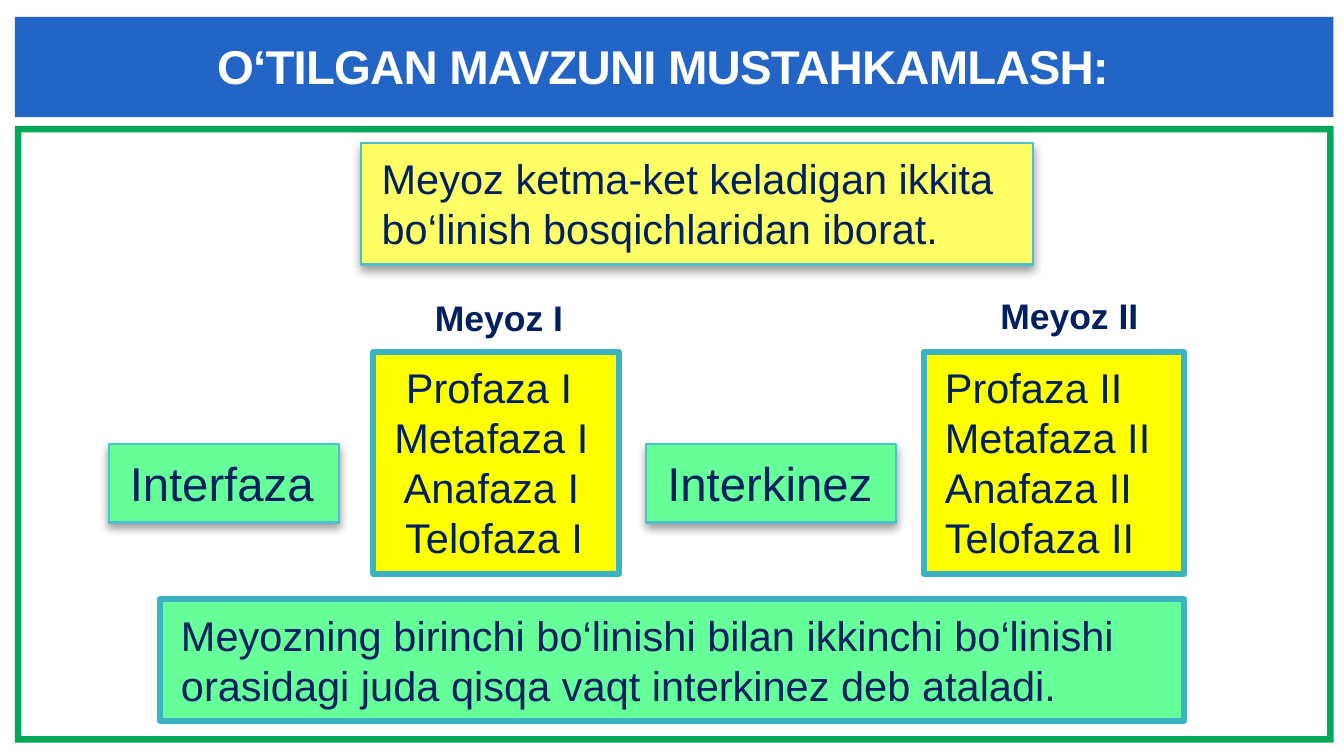
from pptx import Presentation
from pptx.dml.color import RGBColor
from pptx.enum.shapes import MSO_SHAPE
from pptx.enum.text import MSO_ANCHOR, MSO_AUTO_SIZE, PP_ALIGN
from pptx.oxml import parse_xml
from pptx.oxml.ns import nsdecls
from pptx.util import Cm, Inches, Pt

RECTANGLE = MSO_SHAPE.RECTANGLE
TOP, MIDDLE = MSO_ANCHOR.TOP, MSO_ANCHOR.MIDDLE
LEFT, CENTER = PP_ALIGN.LEFT, PP_ALIGN.CENTER
GROW = MSO_AUTO_SIZE.SHAPE_TO_FIT_TEXT

COLORS = {
    "band": "2365C7", "frame": "00A859", "title": "FEFEFE", "text": "002060",
    "mint": "66FF99", "lemon": "FFFF66", "yellow": "FFFF00",
    "thin": "4CC1C9", "thick": "3CB2C3",
}
FONT = "Arial"
TITLE = "O‘TILGAN MAVZUNI MUSTAHKAMLASH:"
BAND = (0.07, 0.08, 6.18, 0.47)
FRAME = (0.07, 0.59, 6.18, 2.89)
FRAME_THICKNESS = 0.03

# lines, place, fill, text size, wraps, raised (thin line with a shadow)
CARDS = [
    (["Interkinez"], (3.03, 2.08, 1.17, 0.37), "mint", 16, False, True),
    (["Profaza II", "Metafaza II", "Anafaza II", "Telofaza II"],
     (4.33, 1.65, 1.22, 1.04), "yellow", 14, False, False),
    (["Meyozning birinchi bo‘linishi bilan ikkinchi bo‘linishi "
      "orasidagi juda qisqa vaqt interkinez deb ataladi."],
     (0.75, 2.81, 4.8, 0.57), "mint", 14, True, False),
    (["Meyoz ketma-ket keladigan ikkita bo‘linish bosqichlaridan iborat."],
     (1.69, 0.67, 3.15, 0.57), "lemon", 14, True, True),
    ([" Profaza I", "Metafaza I", " Anafaza I", " Telofaza I"],
     (1.75, 1.65, 1.15, 1.04), "yellow", 14, True, False),
    (["Interfaza"], (0.51, 2.08, 1.08, 0.37), "mint", 16, False, True),
]
HEADINGS = [
    ("Meyoz I", (1.94, 1.34, 0.81, 0.3)),
    ("Meyoz II", (4.59, 1.33, 0.86, 0.3)),
]


def color(name):
    return RGBColor.from_string(COLORS[name])


def inches(place):
    return [Inches(value) for value in place]


def paint(shape, fill):
    shape.shadow.inherit = False
    shape.fill.solid()
    shape.fill.fore_color.rgb = color(fill)
    shape.line.fill.background()


def write(box, lines, size, ink="text", bold=False, wrap=False,
          align=LEFT, anchor=TOP):
    frame = box.text_frame
    frame.text = "\n".join(lines)
    frame.word_wrap = wrap
    frame.auto_size = GROW
    frame.vertical_anchor = anchor
    for para in frame.paragraphs:
        para.alignment = align
        for span in para.runs:
            span.font.name = FONT
            span.font.size = Pt(size)
            span.font.bold = bold
            span.font.color.rgb = color(ink)


def raise_card(card):
    """Give the card a soft shadow straight below it."""
    properties = card._element.spPr
    properties.remove(properties.find("{*}effectLst"))
    properties.append(parse_xml(
        f'<a:effectLst {nsdecls("a")}>'
        f'<a:outerShdw blurRad="{Pt(3.1)}" dist="{Pt(1.6)}" dir="5400000" '
        'rotWithShape="0"><a:srgbClr val="000000"><a:alpha val="38000"/>'
        '</a:srgbClr></a:outerShdw></a:effectLst>'))


def corners(left, top, width, height):
    right, bottom = left + width, top + height
    return [(left, top), (right, top), (right, bottom), (left, bottom)]


def add_frame(page):
    left, top, width, height = inches(FRAME)
    edge = Inches(FRAME_THICKNESS)
    outer = corners(left, top, width, height)
    inner = corners(left + edge, top + edge,
                    width - 2 * edge, height - 2 * edge)[::-1]
    outline = page.shapes.build_freeform(*outer[0])
    outline.add_line_segments(outer[1:])
    outline.move_to(*inner[0])
    outline.add_line_segments(inner[1:])
    paint(outline.convert_to_shape(), "frame")


def add_title(page):
    paint(page.shapes.add_shape(RECTANGLE, *inches(BAND)), "band")
    box = page.shapes.add_textbox(*inches((0.06, 0.15, 6.1, 0.29)))
    write(box, [TITLE], 16, "title", True, True, CENTER, MIDDLE)
    frame = box.text_frame
    frame.margin_left = frame.margin_right = frame.margin_bottom = 0
    frame.margin_top = Inches(0.02)
    para = frame.paragraphs[0]
    para.space_before = Pt(1.3)
    para.runs[0].font._element.set("spc", "-25")


def add_card(page, lines, place, fill, size, wrap, raised):
    card = page.shapes.add_shape(RECTANGLE, *inches(place))
    paint(card, fill)
    card.line.color.rgb = color("thin" if raised else "thick")
    card.line.width = Pt(0.75 if raised else 2)
    if raised:
        raise_card(card)
    write(card, lines, size, wrap=wrap)


def main():
    deck = Presentation()
    deck.slide_width, deck.slide_height = Cm(16), Cm(9)
    page = deck.slides.add_slide(deck.slide_layouts[6])
    add_frame(page)
    add_title(page)
    for card in CARDS:
        add_card(page, *card)
    for heading, place in HEADINGS:
        box = page.shapes.add_textbox(*inches(place))
        write(box, [heading], 12, bold=True)
    deck.save("out.pptx")


if __name__ == "__main__":
    main()
